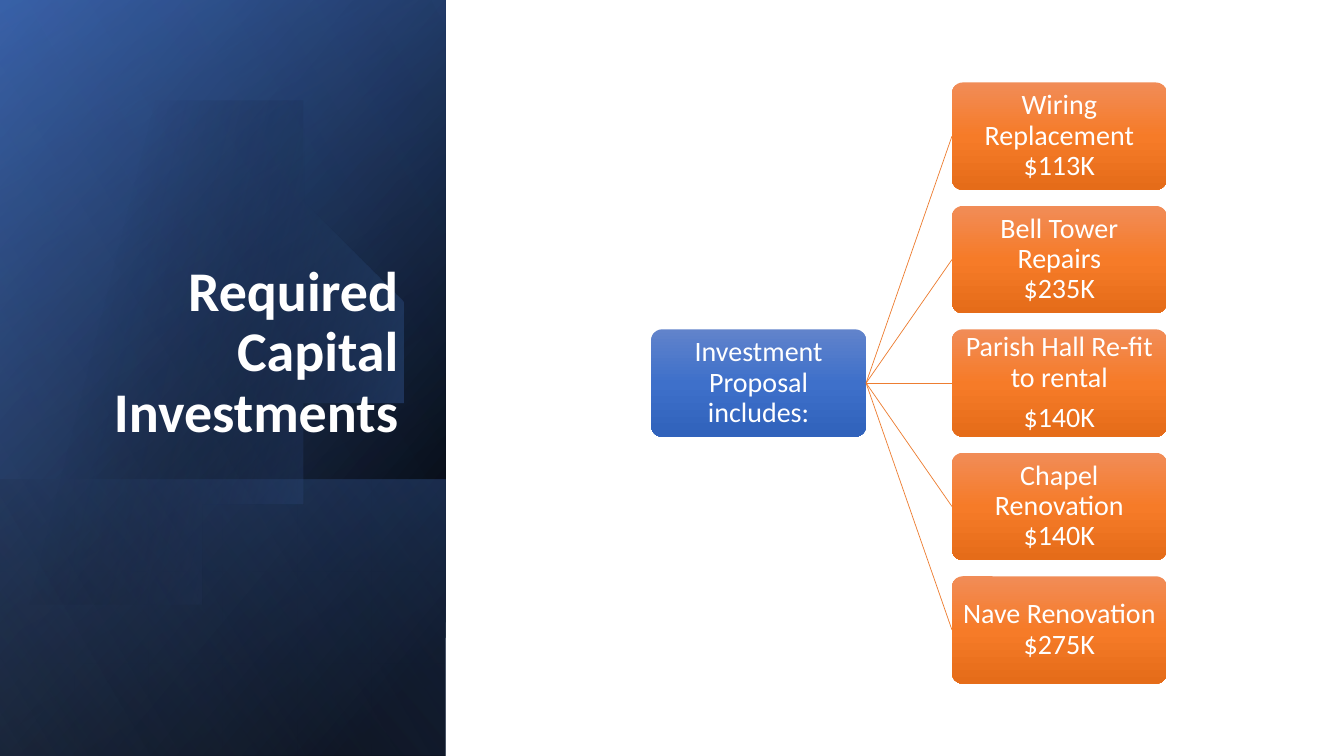
from math import acos, cos, pi, sin

from lxml.etree import SubElement
from pptx import Presentation
from pptx.dml.color import RGBColor
from pptx.enum.shapes import MSO_CONNECTOR as Line, MSO_SHAPE as Preset
from pptx.enum.text import MSO_ANCHOR as Anchor, MSO_AUTO_SIZE as AutoSize, PP_ALIGN as Align
from pptx.oxml import parse_xml
from pptx.oxml.ns import nsdecls, qn
from pptx.util import Inches, Pt

SLIDE_W, SLIDE_H = 13.33, 7.5
PANEL_W = 4.42
FONT = "Calibri"
COLORS = {
    "black": "000000", "navy": "2F5597", "blue": "4472C4", "sky": "8FAADC",
    "white": "FFFFFF", "link": "ED7D31",
    "root_top": "6183CB", "root_mid": "3E70CA", "root_end": "3062BB",
    "item_top": "F18C57", "item_mid": "F67B28", "item_end": "E56C19",
}

# Diagram grid: two columns of equal boxes, five rows
BOX_W = 2.13
BOX_H = BOX_W / 2
ROW_STEP = BOX_H * 1.15
COLUMN_STEP = BOX_W * 1.4
ROOT_LEFT, DIAGRAM_MIDDLE = 6.46, 3.8

# Each item is a list of paragraphs, each paragraph a list of lines
ROOT = [["Investment Proposal includes:"]]
ITEMS = [
    [["Wiring Replacement", "$113K"]],
    [["Bell Tower Repairs", "$235K"]],
    [["Parish Hall Re-fit to rental"], ["$140K"]],
    [["Chapel Renovation", "$140K"]],
    [["Nave Renovation", "$275K"]],
]

# Panel layers: top, height, gradient angle, stops (position, colour, opacity)
PANEL_LAYERS = [
    (0, SLIDE_H, 50, [(8, "black", 100), (100, "navy", 100)]),
    (0, SLIDE_H, 30, [(0, "black", 0), (99, "blue", 46)]),
    (4.76, SLIDE_H - 4.76, 130, [(2, "blue", 29), (100, "black", 30)]),
]
PANEL_GLOW = (0, SLIDE_H, 120, [(0, "black", 0), (99, "sky", 11)])


def rgb(name):
    return RGBColor.from_string(COLORS[name])


def paint_gradient(shape, angle, stops):
    """Give a shape a linear gradient, no outline and no shadow."""
    shape.shadow.inherit = False
    shape.line.fill.background()
    shape.fill.background()
    gradient = parse_xml(f'<a:gradFill {nsdecls("a")} rotWithShape="1"/>')
    stop_list = SubElement(gradient, qn("a:gsLst"))
    for position, color, opacity in stops:
        stop = SubElement(stop_list, qn("a:gs"), pos=str(position * 1000))
        tint = SubElement(stop, qn("a:srgbClr"), val=COLORS[color])
        if opacity < 100:
            SubElement(tint, qn("a:alpha"), val=str(opacity * 1000))
    SubElement(gradient, qn("a:lin"), ang=str(angle * 60000), scaled="0")
    properties = shape._element.spPr
    properties.replace(properties.find(qn("a:noFill")), gradient)


def add_panel_layer(slide, top, height, angle, stops):
    """Cover part of the side panel with a mirrored, quarter-turned rectangle."""
    left = (PANEL_W - height) / 2
    layer = slide.shapes.add_shape(
        Preset.RECTANGLE, Inches(left), Inches(top - left),
        Inches(height), Inches(PANEL_W))
    layer.rotation = 90
    layer._element.spPr.xfrm.set("flipH", "1")
    paint_gradient(layer, angle, stops)


def add_disc(slide, center_x, center_y, radius, steps=90):
    """Draw the part of a circle that lies right of the slide's left edge."""
    reach = pi - acos(center_x / radius)
    angles = [reach * (2 * step / steps - 1) for step in range(steps + 1)]
    rim = [(center_x + radius * cos(a), center_y + radius * sin(a)) for a in angles]
    outline = slide.shapes.build_freeform(*rim[0], scale=Inches(1))
    outline.add_line_segments(rim[1:], close=True)
    paint_gradient(outline.convert_to_shape(), 14,
                   [(29, "black", 0), (100, "blue", 43)])


def add_text(paragraph, text, size, bold=False):
    run = paragraph.add_run()
    run.text = text
    run.font.name, run.font.size, run.font.bold = FONT, Pt(size), bold
    run.font.color.rgb = rgb("white")


def add_box(slide, left, middle, paragraphs, tone):
    box = slide.shapes.add_shape(
        Preset.ROUNDED_RECTANGLE, Inches(left), Inches(middle - BOX_H / 2),
        Inches(BOX_W), Inches(BOX_H))
    box.adjustments[0] = 0.1
    paint_gradient(box, 90, [(0, f"{tone}_top", 100), (50, f"{tone}_mid", 100),
                             (100, f"{tone}_end", 100)])
    frame = box.text_frame
    frame.word_wrap, frame.vertical_anchor = True, Anchor.MIDDLE
    frame.margin_left = frame.margin_right = Inches(0.05)
    frame.margin_top = frame.margin_bottom = Inches(0.05)
    for index, lines in enumerate(paragraphs):
        paragraph = frame.add_paragraph() if index else frame.paragraphs[0]
        paragraph.alignment, paragraph.line_spacing = Align.CENTER, 0.9
        paragraph.space_after = Pt(7)
        for number, line in enumerate(lines):
            if number:
                paragraph.add_line_break()
            add_text(paragraph, line, 20)


def add_link(slide, start_x, start_y, end_x, end_y):
    link = slide.shapes.add_connector(
        Line.STRAIGHT, Inches(start_x), Inches(start_y), Inches(end_x), Inches(end_y))
    link.line.color.rgb = rgb("link")
    link.line.width = Pt(0.5)
    SubElement(link._element.spPr, qn("a:effectLst"))


def place_title(slide, text):
    title = slide.shapes.title
    title.left, title.top = Inches(0.64), Inches(1.84)
    title.width, title.height = Inches(3.41), Inches(2.62)
    frame = title.text_frame
    frame.word_wrap, frame.auto_size = True, AutoSize.NONE
    frame.vertical_anchor = Anchor.BOTTOM
    paragraph = frame.paragraphs[0]
    paragraph.alignment, paragraph.line_spacing = Align.RIGHT, 0.9
    add_text(paragraph, text, 40, bold=True)
    # Bring the title in front of the panel
    slide.shapes._spTree.append(title._element)


def add_diagram(slide):
    item_left = ROOT_LEFT + COLUMN_STEP
    add_box(slide, ROOT_LEFT, DIAGRAM_MIDDLE, ROOT, "root")
    for row, item in enumerate(ITEMS):
        middle = DIAGRAM_MIDDLE + (row - len(ITEMS) // 2) * ROW_STEP
        add_link(slide, ROOT_LEFT + BOX_W, DIAGRAM_MIDDLE, item_left, middle)
        add_box(slide, item_left, middle, item, "item")


def main():
    deck = Presentation()
    deck.slide_width, deck.slide_height = Inches(SLIDE_W), Inches(SLIDE_H)
    slide = deck.slides.add_slide(deck.slide_layouts[5])

    # Side panel
    for layer in PANEL_LAYERS:
        add_panel_layer(slide, *layer)
    add_disc(slide, 1.42, 3.41, 2.3)
    add_panel_layer(slide, *PANEL_GLOW)

    # Title and diagram
    place_title(slide, "Required Capital Investments")
    add_diagram(slide)
    deck.save("out.pptx")


if __name__ == "__main__":
    main()
